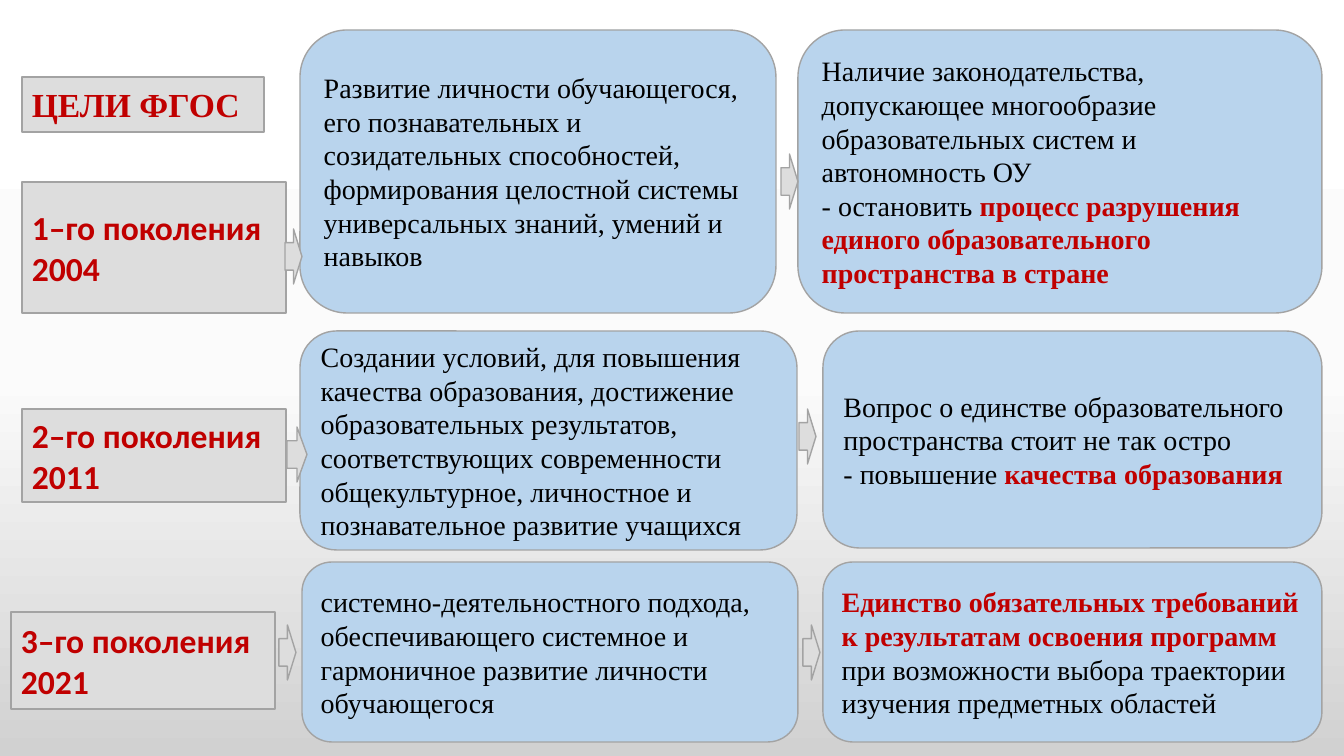
from copy import deepcopy

from pptx import Presentation
from pptx.dml.color import RGBColor
from pptx.enum.shapes import MSO_SHAPE as Shape
from pptx.enum.text import MSO_ANCHOR as Anchor, PP_ALIGN as Align
from pptx.util import Emu, Pt

EMU_PER_PX = 914400 / 100.8
GREY, BLUE, BORDER = "DDDDDD", "B9D4ED", "A3A3A3"
RED, BLACK = "C00000", "000000"
SERIF, SANS = "Times New Roman", "Calibri"


def color(value):
    return RGBColor.from_string(value)


def add_box(kind, box, fill, paragraphs=(), font=SERIF, size=20):
    """Draw a bordered shape; each paragraph is a list of (text, is_key) runs."""
    shape = slide.shapes.add_shape(kind, *[Emu(round(px * EMU_PER_PX)) for px in box])
    shape.shadow.inherit = False
    shape.fill.solid()
    shape.fill.fore_color.rgb = color(fill)
    shape.line.color.rgb = color(BORDER)
    shape.line.width = Pt(1)
    frame = shape.text_frame
    frame.word_wrap = True
    frame.vertical_anchor = Anchor.MIDDLE
    for index, runs in enumerate(paragraphs):
        paragraph = frame.add_paragraph() if index else frame.paragraphs[0]
        paragraph.alignment = Align.LEFT
        for text, is_key in runs:
            for line_index, line in enumerate(text.split("\n")):
                if line_index:
                    paragraph.add_line_break()
                run = paragraph.add_run()
                run.text = line
                run.font.name = font
                run.font.size = Pt(size)
                run.font.bold = is_key
                run.font.color.rgb = color(RED if is_key else BLACK)


presentation = Presentation()
presentation.slide_width = Emu(round(1344 * EMU_PER_PX))
presentation.slide_height = Emu(round(756 * EMU_PER_PX))
slide = presentation.slides.add_slide(presentation.slide_layouts[6])

# Background: white to grey, top to bottom
background = slide.background.fill
background.gradient()
background.gradient_angle = 270
first_stop = background.gradient_stops[0]._gs
first_stop.addnext(deepcopy(first_stop))
stops = [(0, "FFFFFF"), (0.5, "FBFBFB"), (1, "D1D1D1")]
for stop, (position, value) in zip(background.gradient_stops, stops):
    stop.position = position
    stop.color.rgb = color(value)

# Title
add_box(Shape.RECTANGLE, (22, 77, 242, 55), GREY, [[("ЦЕЛИ ФГОС", True)]], size=24)

# Generations of the standard
generations = [
    ((22, 182, 264, 131), "1–го поколения", "2004"),
    ((22, 409, 264, 93), "2–го поколения", "2011"),
    ((11, 612, 264, 97), "3–го поколения", "2021"),
]
for box, generation, year in generations:
    add_box(Shape.RECTANGLE, box, GREY, [[(generation, True)], [(year, True)]], SANS, 24)

# Goals (middle column) and outcomes (right column)
cards = [
    ((300, 30, 476, 283), [[(
        "Развитие личности обучающегося, его познавательных и созидательных "
        "способностей, формирования целостной системы универсальных знаний, "
        "умений и навыков", False)]]),
    ((300, 331, 497, 219), [[(
        "Создании условий, для повышения качества образования, достижение "
        "образовательных результатов, соответствующих современности "
        "общекультурное, личностное и познавательное развитие учащихся", False)]]),
    ((302, 562, 496, 180), [[(
        "системно-деятельностного подхода, обеспечивающего системное и "
        "гармоничное развитие личности обучающегося", False)]]),
    ((798, 30, 524, 283), [
        [("Наличие законодательства,\nдопускающее многообразие образовательных "
          "систем и автономность ОУ", False)],
        [("- остановить ", False),
         ("процесс разрушения единого образовательного пространства в стране", True)]]),
    ((823, 331, 499, 217), [
        [("Вопрос о единстве образовательного пространства стоит не так остро", False)],
        [("- повышение ", False), ("качества образования", True)]]),
    ((823, 562, 499, 180), [[
        ("Единство обязательных требований к результатам освоения программ ", True),
        ("при возможности выбора траектории изучения предметных областей", False)]]),
]
for box, paragraphs in cards:
    add_box(Shape.ROUNDED_RECTANGLE, box, BLUE, paragraphs)

# Arrows between the columns
arrows = [(285, 229, 17), (287, 427, 20), (279, 625, 17),
          (781, 154, 17), (799, 409, 17), (803, 625, 17)]
for left, top, width in arrows:
    add_box(Shape.RIGHT_ARROW, (left, top, width, 55), GREY)

presentation.save("out.pptx")
